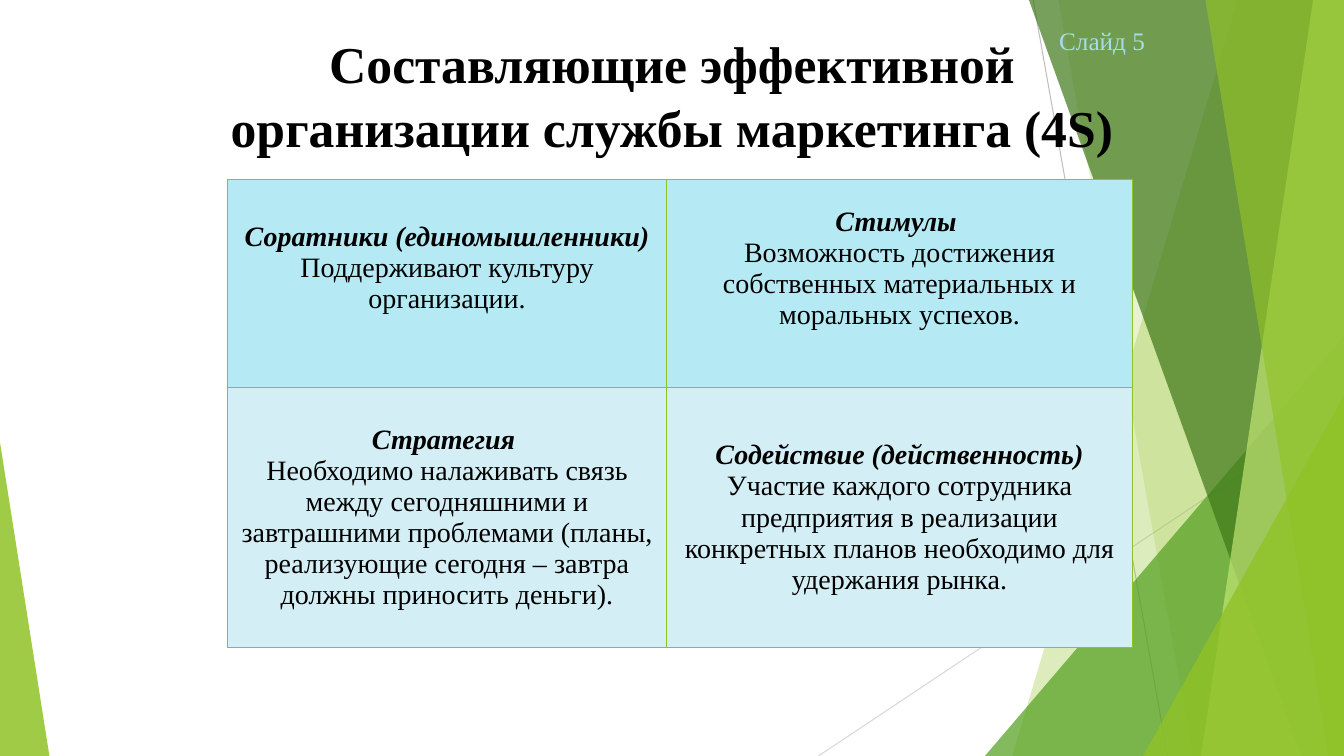
import pptx
import pptx.dml.color
import pptx.enum.shapes
import pptx.enum.text
import pptx.oxml
import pptx.oxml.ns
import pptx.util

Pt = pptx.util.Pt
RGBColor = pptx.dml.color.RGBColor
SHAPE = pptx.enum.shapes.MSO_SHAPE
CENTER = pptx.enum.text.PP_ALIGN.CENTER
MIDDLE = pptx.enum.text.MSO_ANCHOR.MIDDLE

WIDTH, HEIGHT = 960, 540
FONT = "Times New Roman"
BLACK = RGBColor(0x00, 0x00, 0x00)
LIME = RGBColor(0x90, 0xC2, 0x26)
GREEN = RGBColor(0x54, 0xA0, 0x21)
FOREST = RGBColor(0x3F, 0x78, 0x19)
PALE_LIME = RGBColor(0xC0, 0xE4, 0x74)
GRAY = RGBColor(0xBF, 0xBF, 0xBF)
LIGHT_GRAY = RGBColor(0xD9, 0xD9, 0xD9)
LABEL_BLUE = RGBColor(0xA6, 0xDD, 0xEA)
ROW_FILLS = [RGBColor(0xB5, 0xE9, 0xF4), RGBColor(0xD3, 0xEE, 0xF5)]

FOUR_S = [
    [
        ("Соратники (единомышленники)", "Поддерживают культуру организации."),
        ("Стимулы ", "Возможность достижения собственных материальных и моральных успехов."),
    ],
    [
        ("Стратегия ", "Необходимо налаживать связь между сегодняшними и завтрашними "
         "проблемами (планы, реализующие сегодня – завтра должны приносить деньги)."),
        ("Содействие (действенность)", "Участие каждого сотрудника предприятия в реализации "
         "конкретных планов необходимо для удержания рынка."),
    ],
]


def xml_element(text):
    namespace = pptx.oxml.ns.nsdecls("a")
    return pptx.oxml.parse_xml(text.replace("/>", f" {namespace}/>", 1)
                               if text.endswith("/>") and text.count("<") == 1
                               else text.replace(">", f" {namespace}>", 1))


def paint(shape, color, opacity):
    shape.shadow.inherit = False
    shape.line.fill.background()
    shape.fill.solid()
    shape.fill.fore_color.rgb = color
    color_node = shape.fill._xPr.find(".//" + pptx.oxml.ns.qn("a:srgbClr"))
    color_node.append(xml_element(f'<a:alpha val="{opacity * 1000}"/>'))


def add_thin_line(page, start, end, color):
    line = page.shapes.add_connector(
        pptx.enum.shapes.MSO_CONNECTOR.STRAIGHT, *map(Pt, start + end))
    line.line.color.rgb = color
    line.line.width = Pt(0.75)
    line.element.spPr.append(xml_element("<a:effectLst/>"))


def add_facet(page, top_x, bottom_x, color, opacity):
    """Add a full-height panel with a slanted left side, reaching the right slide edge."""
    builder = page.shapes.build_freeform(Pt(top_x), 0, scale=1.0)
    corners = [(WIDTH, 0), (WIDTH, HEIGHT), (bottom_x, HEIGHT)]
    builder.add_line_segments([(Pt(x), Pt(y)) for x, y in corners], close=True)
    paint(builder.convert_to_shape(), color, opacity)


def add_corner(page, left, top, width, apex, color, opacity):
    """Add a triangle standing on the bottom slide edge."""
    corner = page.shapes.add_shape(
        SHAPE.ISOSCELES_TRIANGLE, Pt(left), Pt(top), Pt(width), Pt(HEIGHT - top))
    corner.adjustments[0] = apex
    paint(corner, color, opacity)


def add_backdrop(page):
    add_thin_line(page, (738, 0), (834, HEIGHT), GRAY)
    add_thin_line(page, (WIDTH, 290), (584.6, HEIGHT), LIGHT_GRAY)
    add_facet(page, 884, 723, LIME, 30)
    add_facet(page, 756, 852, LIME, 20)
    add_corner(page, 703.5, 240, WIDTH - 703.5, 1, GREEN, 72)
    add_facet(page, 735, 929.5, FOREST, 70)
    add_facet(page, 938, 858, PALE_LIME, 70)
    add_facet(page, 861, 949, LIME, 65)
    add_corner(page, 816.5, 283, WIDTH - 816.5, 1, LIME, 80)
    add_corner(page, 0, 316, 35.3, 0, LIME, 85)


def style_font(para, size, color, bold=False, italic=False):
    font = para.font
    font.name, font.size = FONT, Pt(size)
    font.bold, font.italic = bold, italic
    font.color.rgb = color


def place_title(page, left, top, width, height):
    title = page.shapes.title
    title.left, title.top, title.width, title.height = map(Pt, (left, top, width, height))
    frame = title.text_frame
    frame.text = "Составляющие эффективной организации службы маркетинга (4S)"
    frame.word_wrap = True
    frame.vertical_anchor = MIDDLE
    para = frame.paragraphs[0]
    para.alignment = CENTER
    para.line_spacing = 1.04
    style_font(para, 36.9, BLACK, bold=True)
    title.element.getparent().append(title.element)  # bring in front of the backdrop


def add_slide_label(page, left, top, width, height):
    label = page.shapes.add_textbox(*map(Pt, (left, top, width, height)))
    label.text_frame.word_wrap = True
    para = label.text_frame.paragraphs[0]
    para.text = "Слайд 5"
    style_font(para, 18, LABEL_BLUE)


def add_borders(cell):
    properties = cell._tc.get_or_add_tcPr()
    for index, side in enumerate(("lnL", "lnR", "lnT", "lnB")):
        properties.insert(index, xml_element(
            f'<a:{side} w="{Pt(1)}"><a:solidFill><a:srgbClr val="{LIME}"/></a:solidFill></a:{side}>'))


def fill_cell(cell, heading, description, color, bottom_margin):
    cell.fill.solid()
    cell.fill.fore_color.rgb = color
    add_borders(cell)
    cell.vertical_anchor = MIDDLE
    cell.margin_left = cell.margin_right = Pt(2)
    cell.margin_top, cell.margin_bottom = 0, Pt(bottom_margin)
    frame = cell.text_frame
    frame.text = f"{heading}\n{description}"
    for para, emphasis in zip(frame.paragraphs, (True, False)):
        para.alignment = CENTER
        style_font(para, 20, BLACK, bold=emphasis, italic=emphasis)


def add_four_s_table(page, left, top, column_widths, row_heights):
    table = page.shapes.add_table(
        len(row_heights), len(column_widths), Pt(left), Pt(top),
        Pt(sum(column_widths)), Pt(sum(row_heights))).table
    table.first_row = table.horz_banding = False
    for column, width in zip(table.columns, column_widths):
        column.width = Pt(width)
    for row, height, texts, color, margin in zip(
            table.rows, row_heights, FOUR_S, ROW_FILLS, (22, 0)):
        row.height = Pt(height)
        for cell, (heading, description) in zip(row.cells, texts):
            fill_cell(cell, heading, description, color, margin)


def main():
    deck = pptx.Presentation()
    deck.slide_width, deck.slide_height = Pt(WIDTH), Pt(HEIGHT)
    page = deck.slides.add_slide(deck.slide_layouts[5])
    add_backdrop(page)
    place_title(page, 139, 3, 682.5, 127.5)
    add_slide_label(page, 749.5, 14.4, 76.3, 29)
    add_four_s_table(page, 162.5, 128.3, (313.7, 332.8), (148.5, 185.8))
    deck.save("out.pptx")


if __name__ == "__main__":
    main()
